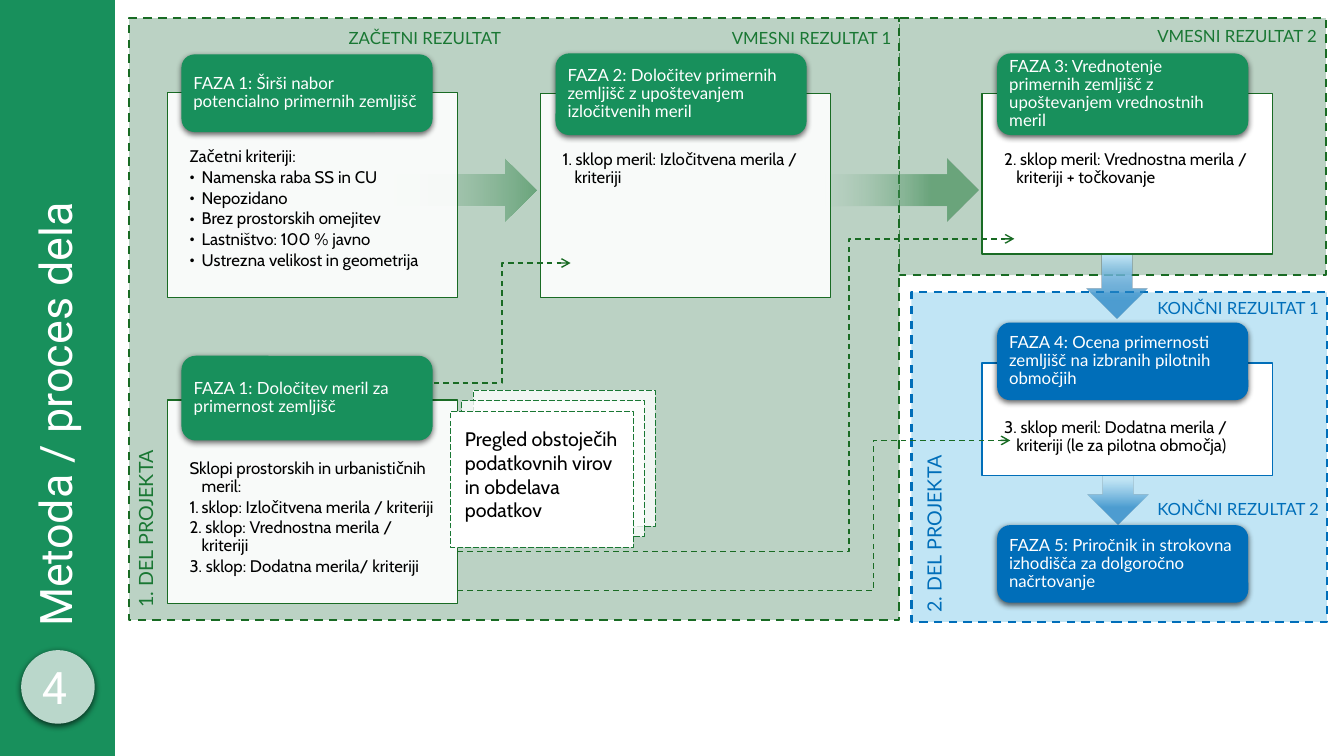
from dataclasses import dataclass
from typing import NamedTuple

from lxml import etree
from pptx import Presentation
from pptx.dml.color import RGBColor
from pptx.enum.dml import MSO_LINE
from pptx.enum.shapes import MSO_CONNECTOR, MSO_SHAPE
from pptx.enum.text import MSO_ANCHOR, PP_ALIGN
from pptx.oxml.ns import qn
from pptx.util import Emu, Inches, Pt

RECT, ROUND = MSO_SHAPE.RECTANGLE, MSO_SHAPE.ROUNDED_RECTANGLE
OVAL, ARROW = MSO_SHAPE.OVAL, MSO_SHAPE.RIGHT_ARROW
ELBOW = MSO_CONNECTOR.ELBOW
DASH, LONG = MSO_LINE.DASH, MSO_LINE.LONG_DASH
TOP, MID = MSO_ANCHOR.TOP, MSO_ANCHOR.MIDDLE
LEFT, CENTER = PP_ALIGN.LEFT, PP_ALIGN.CENTER

CELL = Inches(0.1)  # columns and rows are a tenth of an inch
HANG = Inches(0.12)
HEX = {
    "white": "FFFFFF", "black": "000000", "green": "18905C", "edge": "196B24",
    "leaf": "197733", "sage": "BBD2C4", "mint": "BAD7CB",
    "blue": "006EB9", "sky": "C1E5F5",
}


class Box(NamedTuple):
    col: float
    row: float
    cols: float
    rows: float


class Stop(NamedTuple):
    at: float
    color: str
    alpha: int = 100


class Flow(NamedTuple):
    box: Box
    stops: tuple[Stop, Stop]
    turn: int = 0


class Label(NamedTuple):
    col: float
    row: float
    text: str
    color: str


class Link(NamedTuple):
    start: tuple[float, float]
    end: tuple[float, float]
    bend: int


@dataclass
class Phase:
    title: str
    tab: Box
    card: Box | None = None
    lines: tuple[str, ...] = ()
    mark: str = ""
    inset: float = 5.7
    color: str = "green"
    edge: str = "edge"
    alpha: int = 90


def rgb(name: str) -> RGBColor:
    return RGBColor.from_string(HEX[name])


def cells(*counts: float) -> list[Emu]:
    return [Emu(round(n * CELL)) for n in counts]


def fade(node, alpha: int) -> None:
    """Set the opacity of the colour inside a fill or gradient stop."""
    if alpha < 100:
        tint = node.find(".//" + qn("a:srgbClr"))
        etree.SubElement(tint, qn("a:alpha"), val=str(alpha * 1000))


def shape(kind, box: Box, fill: str = "", edge: str = "", width: float = 1,
          dash=None, alpha: int = 100):
    item = slide.shapes.add_shape(kind, *cells(*box))
    item.shadow.inherit = False
    if fill:
        item.fill.solid()
        item.fill.fore_color.rgb = rgb(fill)
        fade(item._element.spPr.find(qn("a:solidFill")), alpha)
    if edge:
        item.line.color.rgb = rgb(edge)
        item.line.width = Pt(width)
        if dash:
            item.line.dash_style = dash
    else:
        item.line.fill.background()
    return item


def shade(item) -> None:
    """Give a shape its soft drop shadow."""
    glow = etree.SubElement(item._element.spPr.find(qn("a:effectLst")), qn("a:outerShdw"),
                            blurRad=str(Pt(4.5)), dist=str(Pt(1.5)), dir="5400000", rotWithShape="0")
    tint = etree.SubElement(glow, qn("a:srgbClr"), val=HEX["black"])
    etree.SubElement(tint, qn("a:alpha"), val="63000")


def write(item, lines: tuple[str, ...], font: str, size: float, color: str,
          pad: tuple[float, float, float, float] = (1, 0.5, 1, 0.5), anchor=TOP,
          align=LEFT, space: float = 1, after: float = 0, hang: bool = False,
          mark: str = "") -> None:
    frame = item.text_frame
    frame.word_wrap = True
    frame.vertical_anchor = anchor
    (frame.margin_left, frame.margin_top,
     frame.margin_right, frame.margin_bottom) = cells(*pad)
    for i, line in enumerate(lines):
        para = frame.paragraphs[0] if i == 0 else frame.add_paragraph()
        para.text = line
        props = para._p.get_or_add_pPr()
        if hang:
            props.set("marL", str(HANG))
            props.set("indent", str(-HANG))
        if mark and i:
            if mark == "1.":
                etree.SubElement(props, qn("a:buAutoNum"), type="arabicPeriod")
            else:
                etree.SubElement(props, qn("a:buFont"), typeface="Cabin")
                etree.SubElement(props, qn("a:buChar"), char=mark)
        else:
            etree.SubElement(props, qn("a:buNone"))
        para.alignment = align
        para.line_spacing = space
        para.space_before = Pt(0)
        para.space_after = Pt(after)
        para.font.name = font
        para.font.size = Pt(size)
        para.font.color.rgb = rgb(color)


def label(box: Box, text: str, color: str, size: float = 12, turn: int = 0) -> None:
    item = slide.shapes.add_textbox(*cells(*box))
    item.rotation = turn
    write(item, (text,), "Lato", size, color)


def draw_flow(flow: Flow) -> None:
    item = shape(ARROW, flow.box)
    item.rotation = flow.turn
    item.fill.gradient()
    item.fill.gradient_angle = 0
    nodes = item._element.spPr.findall(".//" + qn("a:gs"))
    for stop, tone, node in zip(item.fill.gradient_stops, flow.stops, nodes):
        stop.position = tone.at
        stop.color.rgb = rgb(tone.color)
        fade(node, tone.alpha)


def draw_phase(phase: Phase) -> None:
    if phase.card:
        card = shape(RECT, phase.card, "white", phase.edge, alpha=phase.alpha)
        write(card, phase.lines, "Cabin", 12, "black", (2.2, phase.inset, 2.2, 0.9),
              space=0.9, after=1.8, hang=True, mark=phase.mark)
    tab = shape(ROUND, phase.tab, phase.color)
    shade(tab)
    write(tab, (phase.title,), "Lato", 12, "white", (0.8, 0, 0.8, 0), MID,
          space=0.9, after=4.2)


def draw_link(link: Link) -> None:
    line = slide.shapes.add_connector(ELBOW, *cells(*link.start, *link.end))
    line.line.color.rgb = rgb("edge")
    line.line.width = Pt(1)
    line.line.dash_style = DASH
    props = line._element.spPr
    etree.SubElement(props.find(qn("a:ln")), qn("a:tailEnd"), type="arrow")
    etree.SubElement(props, qn("a:effectLst"))
    guide = props.find(qn("a:prstGeom")).get_or_add_avLst()
    etree.SubElement(guide, qn("a:gd"), name="adj1", fmla=f"val {link.bend * 100}")


ZONES = (
    (Box(89.2, 1.8, 42.3, 25.5), "sage", "edge"),
    (Box(90.4, 29, 41.2, 32.7), "sky", "blue"),
    (Box(12.8, 1.8, 76.4, 59.7), "sage", "edge"),
)
FLOWS = (
    Flow(Box(106.3, 44.5, 9.1, 6), (Stop(0.51, "sky", 50), Stop(0.81, "blue", 60)), 90),
    Flow(Box(106.2, 24, 9.1, 6), (Stop(0.32, "sky"), Stop(0.81, "blue", 60)), 90),
    Flow(Box(38.1, 15.7, 15.1, 6.3), (Stop(0, "sage", 20), Stop(1, "leaf", 50))),
    Flow(Box(81.9, 15.7, 15.1, 6.3), (Stop(0, "sage", 20), Stop(0.69, "leaf", 50))),
)
PHASES = (
    Phase("FAZA 1: Širši nabor potencialno primernih zemljišč",
          Box(18, 5.4, 24.9, 7.7), Box(16.6, 9.2, 28.8, 20.3),
          ("Začetni kriteriji:", "Namenska raba SS in CU", "Nepozidano",
           "Brez prostorskih omejitev", "Lastništvo: 100 % javno",
           "Ustrezna velikost in geometrija"), "•", 5.5),
    Phase("FAZA 2: Določitev primernih zemljišč z upoštevanjem izločitvenih meril",
          Box(55.1, 5.3, 24.9, 8.1), Box(53.6, 9.3, 28.8, 20.2),
          ("1. sklop meril: Izločitvena merila / kriteriji",)),
    Phase("FAZA 3: Vrednotenje primernih zemljišč z upoštevanjem vrednostnih meril",
          Box(98.9, 5.3, 24.9, 8.1), Box(97.4, 9.3, 28.8, 15.9),
          ("2. sklop meril: Vrednostna merila / kriteriji + točkovanje",), alpha=100),
    Phase("FAZA 1: Določitev meril za primernost zemljišč",
          Box(18, 35.3, 24.9, 8.4), Box(16.6, 39.7, 28.8, 20.2),
          ("Sklopi prostorskih in urbanističnih meril:",
           "sklop: Izločitvena merila / kriteriji", " sklop: Vrednostna merila / kriteriji",
           " sklop: Dodatna merila/ kriteriji"), "1.", 5.9),
    Phase("FAZA 4: Ocena primernosti zemljišč na izbranih pilotnih območjih",
          Box(98.9, 32, 24.9, 7.7), Box(97.4, 36, 28.8, 11.2),
          ("3. sklop meril: Dodatna merila / kriteriji (le za pilotna območja)",),
          inset=5.6, color="blue", edge="blue", alpha=100),
    Phase("FAZA 5: Priročnik in strokovna izhodišča za dolgoročno načrtovanje",
          Box(98.9, 52.1, 24.9, 7.7), color="blue"),
)
LABELS = (
    Label(33.6, 2.3, "ZAČETNI REZULTAT", "leaf"),
    Label(71.6, 2.3, "VMESNI REZULTAT 1", "leaf"),
    Label(113.8, 2.1, "VMESNI REZULTAT 2", "leaf"),
    Label(113.8, 29, "KONČNI REZULTAT 1", "blue"),
    Label(113.8, 49, "KONČNI REZULTAT 2", "blue"),
)
PARTS = (
    Label(1.8, 46.9, "1. DEL PROJEKTA", "leaf"),
    Label(80, 47.4, "2. DEL PROJEKTA", "blue"),
)
LINKS = (
    Link((45.4, 54.7), (100.6, 23.7), 703),
    Link((45.4, 58.6), (100.2, 43.7), 752),
    Link((43, 38), (56.6, 26.1), 500),
)

deck = Presentation()
deck.slide_width, deck.slide_height = Inches(13.33), Inches(7.5)
slide = deck.slides.add_slide(deck.slide_layouts[5])

for box, fill, edge in ZONES:
    shape(RECT, box, fill, edge, 1.5, DASH)
for flow in FLOWS:
    draw_flow(flow)

shape(RECT, Box(0, 0, 11.4, 75), "green")
title = slide.shapes.title
slide.shapes._spTree.append(title._element)
title.left, title.top, title.width, title.height = cells(-25.9, 25.9, 63.2, 11.4)
title.rotation = 270
write(title, ("Metoda / proces dela",), "Roboto", 32, "white", anchor=MID, space=0.9)
badge = shape(OVAL, Box(2.1, 64.5, 7.3, 7.3), "mint")
shade(badge)
write(badge, ("4",), "Roboto", 32, "white", (0, 0, 0.7, 0), MID, CENTER)

for phase in PHASES:
    draw_phase(phase)
for i, alpha in enumerate((80, 80, 100)):
    sheet = shape(RECT, Box(46.9 - 1.1 * i, 38.7 + 1.05 * i, 18.1, 13.5),
                  "white", "leaf", 0.5, LONG, alpha)
write(sheet, ("Pregled obstoječih podatkovnih virov in obdelava podatkov",),
      "Cabin", 14, "black", (1.4, 1.6, 0.6, 0.5))
for link in LINKS:
    draw_link(link)
for item in LABELS:
    label(Box(item.col, item.row, 19, 3), item.text, item.color)
for item in PARTS:
    label(Box(item.col, item.row, 25.3, 3.4), item.text, item.color, 14, 270)

deck.save("out.pptx")
